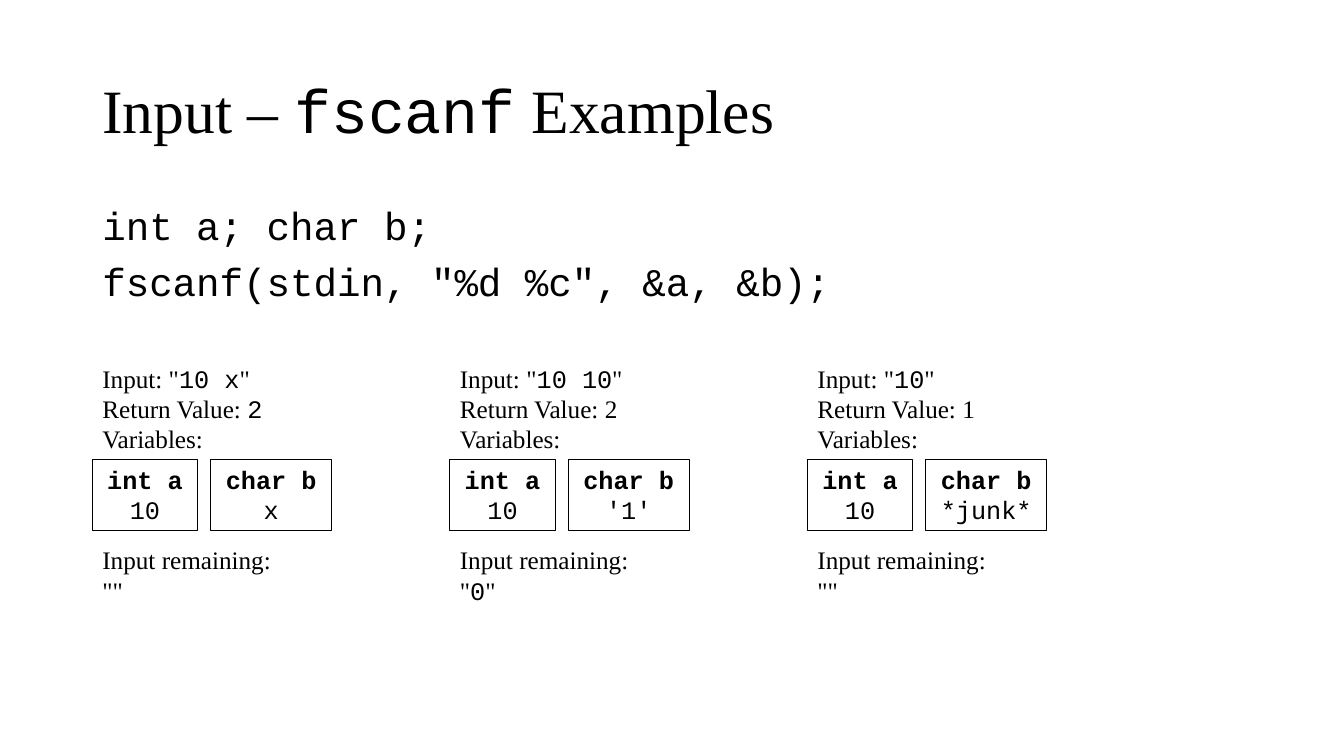
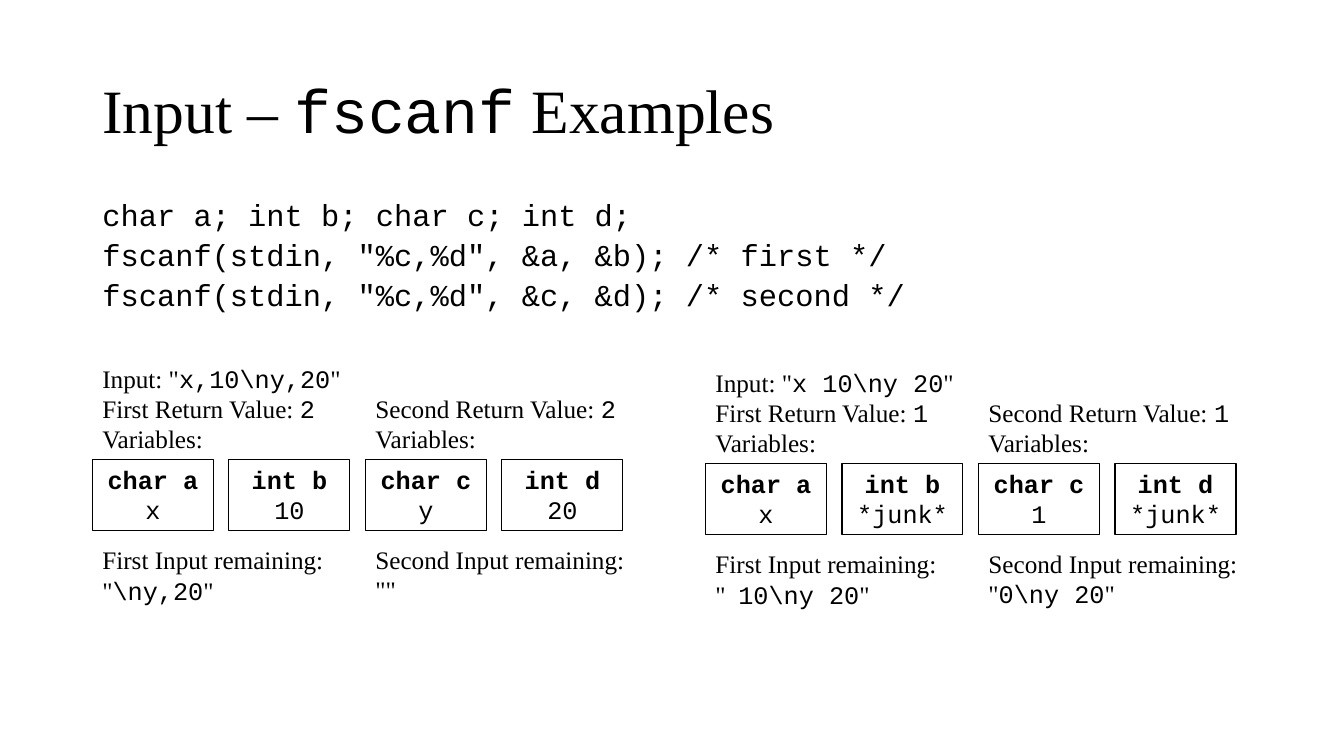
from pptx import Presentation
from pptx.dml.color import RGBColor
from pptx.enum.shapes import MSO_SHAPE
from pptx.enum.text import MSO_ANCHOR, PP_ALIGN
from pptx.util import Cm, Pt

COLORS = {"ink": "000000", "paper": "FFFFFF"}
INK = RGBColor.from_string(COLORS["ink"])
SERIF, MONO = "Times New Roman", "Courier New"
LEFT, BOX_DROP, BOX_H, CHAR_W, INT_W = 2.33, 2.56, 1.8, 3.05, 2.65
LINE_H, REMAINING_GAP = 0.76, 65


def add_text(s, x, y, w, h, lines, size, spacing=None, before=0):
    tf = s.shapes.add_textbox(Cm(x), Cm(y), Cm(w), Cm(h)).text_frame
    tf.word_wrap = True
    for i, line in enumerate(lines):
        p = tf.paragraphs[0] if i == 0 else tf.add_paragraph()
        p.space_before = Pt(before)
        if spacing:
            p.line_spacing = spacing
        for j, part in enumerate(line.split("`")):
            if part:
                r = p.add_run()
                r.text = part
                r.font.name = MONO if j % 2 else SERIF
                r.font.size = Pt(size)
                r.font.color.rgb = INK
    return tf


def add_variable(s, x, y, w, name, value):
    sp = s.shapes.add_shape(MSO_SHAPE.RECTANGLE, Cm(x), Cm(y), Cm(w), Cm(BOX_H))
    sp.shadow.inherit = False
    sp.fill.background()
    sp.line.color.rgb = INK
    sp.line.width = Pt(0.75)
    tf = sp.text_frame
    tf.text = f"{name}\n{value}"
    tf.vertical_anchor = MSO_ANCHOR.TOP
    for i, p in enumerate(tf.paragraphs):
        p.alignment = PP_ALIGN.CENTER
        font = p.runs[0].font
        font.name, font.size, font.bold = MONO, Pt(18), i == 0
        font.color.rgb = INK


prs = Presentation()
prs.slide_width, prs.slide_height = Cm(33.87), Cm(19.05)

codes = [
    (28, 0.9, ["`int a; char b;`", '`fscanf(stdin, "%d %c", &a, &b);`']),
    (21.7, 0.7, [
        "`char a; int b; char c; int d;`",
        '`fscanf(stdin, "%c,%d", &a, &b); /* first */`',
        '`fscanf(stdin, "%c,%d", &c, &d); /* second */`',
    ]),
]
slides = []
for size, spacing, code in codes:
    s = prs.slides.add_slide(prs.slide_layouts[6])
    s.background.fill.solid()
    s.background.fill.fore_color.rgb = RGBColor.from_string(COLORS["paper"])
    tf = add_text(s, LEFT, 1.02, 29.21, 3.68, ["Input – `fscanf` Examples"], 44, 0.9)
    tf.vertical_anchor = MSO_ANCHOR.MIDDLE
    add_text(s, LEFT, 5.08, 29.21, 3.02, code, size, spacing, 10)
    slides.append(s)

single_reads = [
    ('"`10 x`"', "`2`", "x", '""'),
    ('"`10 10`"', "2", "'1'", '"`0`"'),
    ('"`10`"', "1", "*junk*", '""'),
]
s, top = slides[0], 9.02
for i, (given, result, char, rest) in enumerate(single_reads):
    x = LEFT + i * 9.01
    lines = [f"Input: {given}", f"Return Value: {result}", "Variables:", "Input remaining:", rest]
    tf = add_text(s, x, top, 4.8, 6.4, lines, 18)
    tf.paragraphs[3].space_before = Pt(REMAINING_GAP)
    add_variable(s, x, top + BOX_DROP, INT_W, "int a", "10")
    add_variable(s, x + 2.98, top + BOX_DROP, CHAR_W, "char b", char)

double_reads = [
    (LEFT, 9.02, r'"`x,10\ny,20`"', 2, ["x", "10", "y", "20"], [r'"`\ny,20`"', '""']),
    (17.78, 9.12, r'"`x 10\ny 20`"', 1, ["x", "*junk*", "1", "*junk*"],
     [r'"  `10\ny 20`"', r'"`0\ny 20`"']),
]
names = ["char a", "int b", "char c", "int d"]
s, box_step = slides[1], 3.44
for left, top, given, result, values, rests in double_reads:
    for i, (order, rest) in enumerate(zip(["First", "Second"], rests)):
        lines = [f"{order} Return Value: `{result}`", "Variables:", f"{order} Input remaining:", rest]
        if i == 0:
            lines.insert(0, f"Input: {given}")
        tf = add_text(s, left + i * 2 * box_step, top + i * LINE_H, 6.88, 6.4 - i * LINE_H, lines, 18)
        tf.paragraphs[-2].space_before = Pt(REMAINING_GAP)
    for i, (name, value) in enumerate(zip(names, values)):
        add_variable(s, left + i * box_step, top + BOX_DROP, CHAR_W, name, value)

prs.save("out.pptx")
